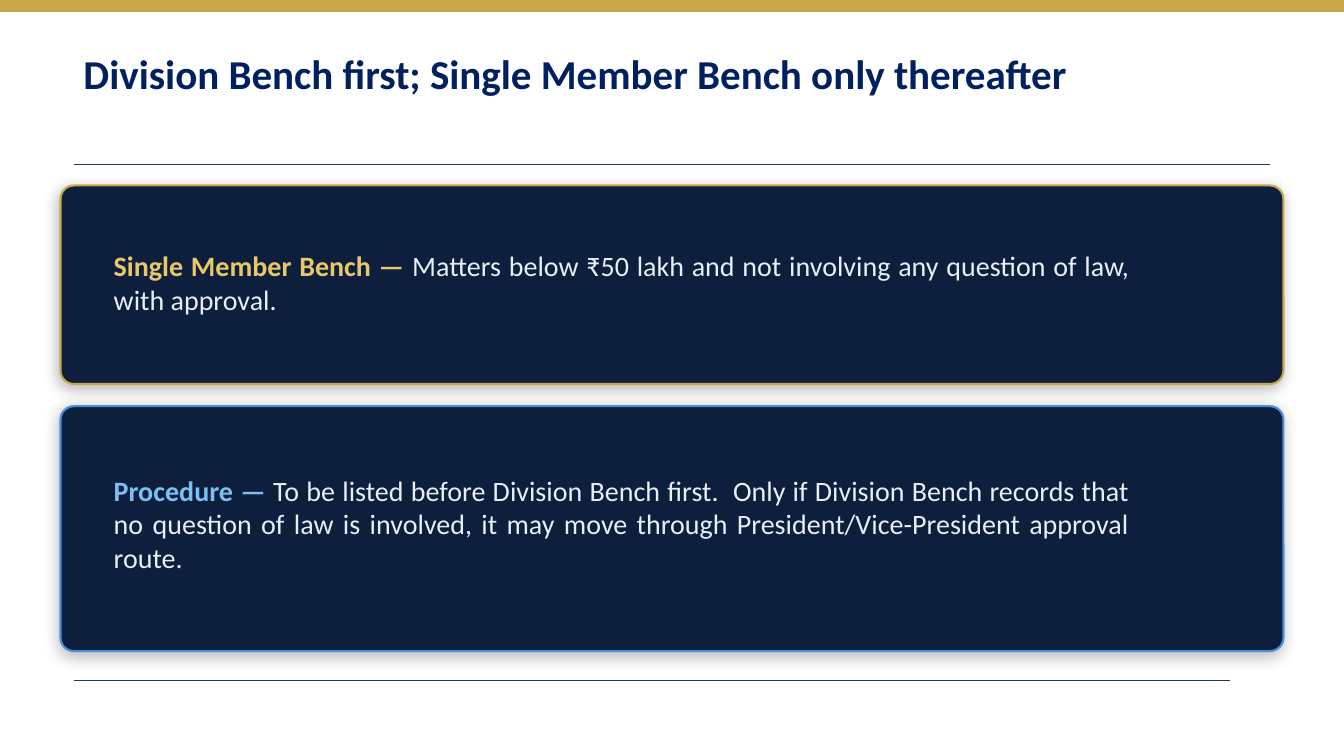
import pptx
import pptx.util
import pptx.dml.color
import pptx.enum.shapes
import pptx.enum.text
import pptx.oxml
import pptx.oxml.ns
from pptx.util import Inches

FONT = "Calibri"
GOLD, NAVY, RULE, PALE = "C9A84C", "0D1F3C", "1E3A6A", "E8EEF6"
TITLE = "Division Bench first; Single Member Bench only thereafter"
CARDS = [
    {"top": 1.84, "height": 1.97, "corner": 0.068, "border": GOLD,
     "text_top": 2.0, "text_height": 1.6, "accent": "E8C96A",
     "label": "Single Member Bench — ",
     "body": "Matters below ₹50 lakh and not involving any question of law, "
             "with approval."},
    {"top": 4.03, "height": 2.43, "corner": 0.055, "border": "4A90D9",
     "text_top": 4.13, "text_height": 2.13, "accent": "7AC0F0",
     "label": "Procedure — ",
     "body": "To be listed before Division Bench first.  Only if Division Bench "
             "records that no question of law is involved, it may move through "
             "President/Vice-President approval route."},
]
RULES = [(1.63, 12.6, 1), (6.75, 12.2, 0.75)]  # y, right end, weight
RULE_LEFT = 0.73
SHADOW = (
    f'<a:outerShdw {pptx.oxml.ns.nsdecls("a")} blurRad="127000" dist="38100" '
    'dir="8100000" algn="bl" rotWithShape="0"><a:srgbClr val="000000">'
    '<a:alpha val="25000"/></a:srgbClr></a:outerShdw>'
)


def colour(value):
    return pptx.dml.color.RGBColor.from_string(value)


def add_panel(page, kind, area, fill, border, weight):
    panel = page.shapes.add_shape(kind, *map(Inches, area))
    panel.shadow.inherit = False
    panel.fill.solid()
    panel.fill.fore_color.rgb = colour(fill)
    panel.line.color.rgb = colour(border)
    panel.line.width = pptx.util.Pt(weight)
    return panel


def add_text(page, area, spans, size, align):
    """Add one paragraph; spans holds (text, colour, bold) tuples."""
    frame = page.shapes.add_textbox(*map(Inches, area)).text_frame
    frame.word_wrap = True
    frame.vertical_anchor = pptx.enum.text.MSO_ANCHOR.MIDDLE
    para = frame.paragraphs[0]
    para.alignment = align
    for text, tint, bold in spans:
        span = para.add_run()
        span.text = text
        span.font.color.rgb = colour(tint)
        look = {"name": FONT, "size": pptx.util.Pt(size), "bold": bold}
        for key, value in look.items():
            setattr(span.font, key, value)


def add_rule(page, y, right, weight):
    rule = page.shapes.add_connector(
        pptx.enum.shapes.MSO_CONNECTOR.STRAIGHT,
        *map(Inches, (RULE_LEFT, y, right, y)))
    rule.line.color.rgb = colour(RULE)
    rule.line.width = pptx.util.Pt(weight)
    rule._element.spPr.append(pptx.oxml.parse_xml(
        f'<a:effectLst {pptx.oxml.ns.nsdecls("a")}/>'))


def add_card(page, card):
    panel = add_panel(
        page, pptx.enum.shapes.MSO_SHAPE.ROUNDED_RECTANGLE,
        (0.6, card["top"], 12.13, card["height"]), NAVY, card["border"], 1.5)
    panel.adjustments[0] = card["corner"]
    effects = panel._element.spPr.find(pptx.oxml.ns.qn("a:effectLst"))
    effects.append(pptx.oxml.parse_xml(SHADOW))
    add_text(page, (1.03, card["text_top"], 10.27, card["text_height"]),
             [(card["label"], card["accent"], True), (card["body"], PALE, False)],
             20, pptx.enum.text.PP_ALIGN.JUSTIFY)


def main():
    deck = pptx.Presentation()
    deck.slide_width, deck.slide_height = Inches(13.33), Inches(7.5)
    page = deck.slides.add_slide(deck.slide_layouts[6])
    add_panel(page, pptx.enum.shapes.MSO_SHAPE.RECTANGLE,
              (0, 0, 13.33, 0.11), GOLD, GOLD, 1)
    add_text(page, (0.73, 0.29, 11.87, 0.87), [(TITLE, "002060", True)],
             29.3, pptx.enum.text.PP_ALIGN.LEFT)
    for rule in RULES:
        add_rule(page, *rule)
    for card in CARDS:
        add_card(page, card)
    deck.save("out.pptx")


if __name__ == "__main__":
    main()
